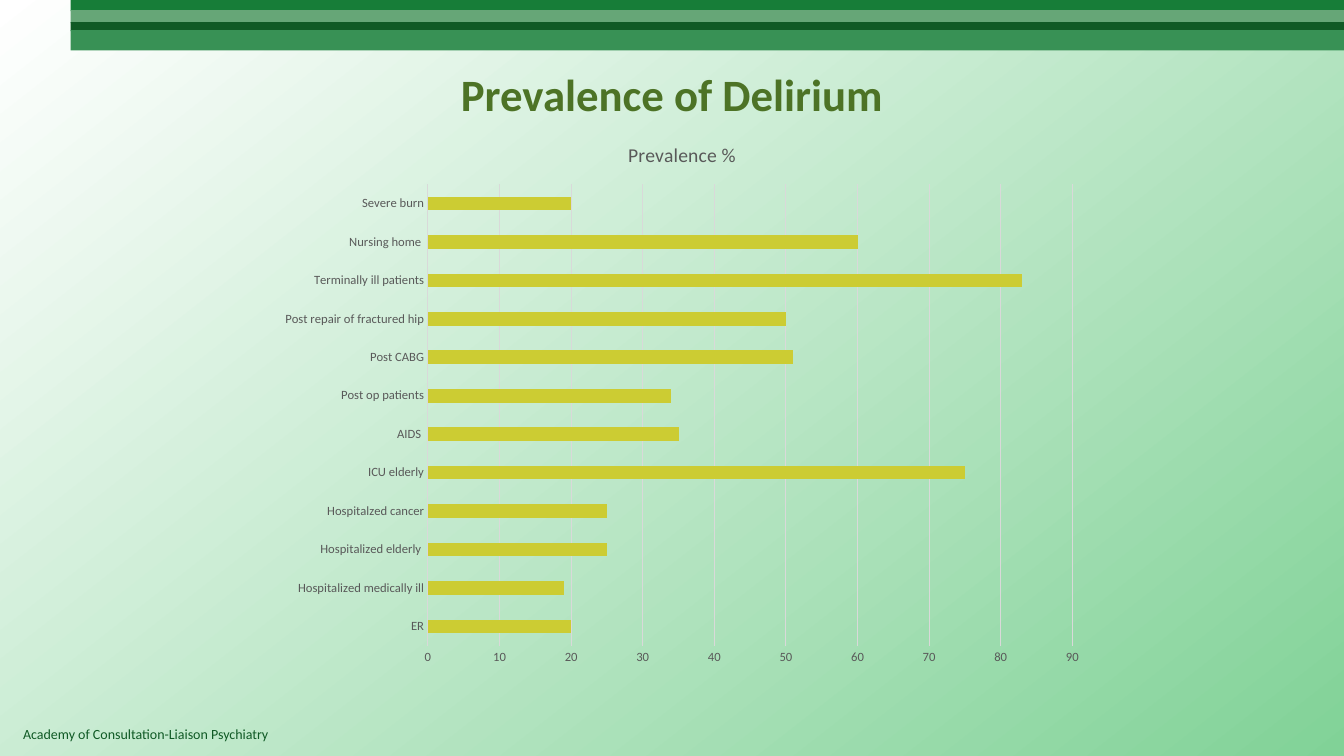
from pptx import Presentation
from pptx.chart.data import CategoryChartData
from pptx.dml.color import RGBColor
from pptx.enum.chart import XL_CHART_TYPE, XL_TICK_MARK
from pptx.enum.shapes import MSO_SHAPE
from pptx.enum.text import MSO_ANCHOR, PP_ALIGN
from pptx.util import Pt

FONT = "Calibri"
COLORS = {
    "white": "FFFFFF",
    "mint": "81D297",
    "title": "4D7326",
    "footer": "105A25",
    "bar": "CCCC33",
    "chart_text": "595959",
    "grid": "D9D9D9",
}
SLIDE_WIDTH, SLIDE_HEIGHT = 960, 540

# Top offset, height and colour of each stripe
STRIPES = [
    (0, 7.9, "177D38"),
    (7.2, 9.4, "66A677"),
    (15.8, 6.5, "105A25"),
    (21.6, 14.4, "389155"),
]

PREVALENCE = {
    "ER": 20,
    "Hospitalized medically ill": 19,
    "Hospitalized elderly ": 25,
    "Hospitalzed cancer": 25,
    "ICU elderly": 75,
    "AIDS ": 35,
    "Post op patients": 34,
    "Post CABG": 51,
    "Post repair of fractured hip": 50,
    "Terminally ill patients": 83,
    "Nursing home ": 60,
    "Severe burn": 20,
}


def rgb(name):
    return RGBColor.from_string(COLORS[name])


def style_font(font, size, color, bold=False):
    font.name = FONT
    font.size = Pt(size)
    font.bold = bold
    font.color.rgb = rgb(color)


def paint_background(slide):
    fill = slide.background.fill
    fill.gradient()
    fill.gradient_angle = 308
    for stop, color, position in zip(fill.gradient_stops, ("white", "mint"), (0, 1)):
        stop.color.rgb = rgb(color)
        stop.position = position


def add_header_stripes(slide, left, top, width):
    for offset, height, color in STRIPES:
        stripe = slide.shapes.add_shape(
            MSO_SHAPE.RECTANGLE, Pt(left), Pt(top + offset), Pt(width), Pt(height))
        stripe.shadow.inherit = False
        stripe.fill.solid()
        stripe.fill.fore_color.rgb = RGBColor.from_string(color)
        stripe.line.fill.background()


def add_footer(slide, left, top, width, height):
    footer = slide.shapes.add_textbox(Pt(left), Pt(top), Pt(width), Pt(height))
    footer.text_frame.word_wrap = True
    run = footer.text_frame.paragraphs[0].add_run()
    run.text = "Academy of Consultation-Liaison Psychiatry"
    style_font(run.font, 10, "footer")


def fill_title(slide, left, top, width, height):
    title = slide.shapes.title
    title.left, title.top = Pt(left), Pt(top)
    title.width, title.height = Pt(width), Pt(height)
    title.text_frame.vertical_anchor = MSO_ANCHOR.MIDDLE
    heading = title.text_frame.paragraphs[0]
    heading.alignment = PP_ALIGN.CENTER
    run = heading.add_run()
    run.text = "Prevalence of Delirium"
    style_font(run.font, 32, "title", bold=True)


def add_prevalence_chart(slide, left, top, width, height):
    data = CategoryChartData()
    data.categories = PREVALENCE.keys()
    data.add_series("Prevalence %", PREVALENCE.values())
    chart = slide.shapes.add_chart(
        XL_CHART_TYPE.BAR_CLUSTERED, Pt(left), Pt(top), Pt(width), Pt(height), data).chart
    style_font(chart.font, 10, "chart_text")
    chart.has_legend = False

    chart.has_title = True
    chart.chart_title.include_in_layout = False
    run = chart.chart_title.text_frame.paragraphs[0].add_run()
    run.text = "Prevalence %"
    style_font(run.font, 14, "chart_text")

    plot = chart.plots[0]
    plot.gap_width = 182
    plot.vary_by_categories = False
    bars = plot.series[0].format.fill
    bars.solid()
    bars.fore_color.rgb = rgb("bar")

    patients, percent = chart.category_axis, chart.value_axis
    for axis in (patients, percent):
        axis.major_tick_mark = axis.minor_tick_mark = XL_TICK_MARK.NONE
        style_font(axis.tick_labels.font, 9, "chart_text")
    percent.minimum_scale, percent.maximum_scale = 0, 90
    percent.major_unit = 10
    percent.format.line.fill.background()
    percent.has_major_gridlines = True
    for line in (patients.format.line, percent.major_gridlines.format.line):
        line.color.rgb = rgb("grid")
        line.width = Pt(0.75)


def main():
    prs = Presentation()
    prs.slide_width, prs.slide_height = Pt(SLIDE_WIDTH), Pt(SLIDE_HEIGHT)
    slide = prs.slides.add_slide(prs.slide_layouts[5])
    paint_background(slide)
    add_header_stripes(slide, 50.4, 0, SLIDE_WIDTH - 50.4)
    add_footer(slide, 9.4, 514.8, 666, 19.4)
    fill_title(slide, 48, 21.6, 864, 90)
    add_prevalence_chart(slide, 192, 86.4, 590.4, 396)
    prs.save("out.pptx")


if __name__ == "__main__":
    main()
